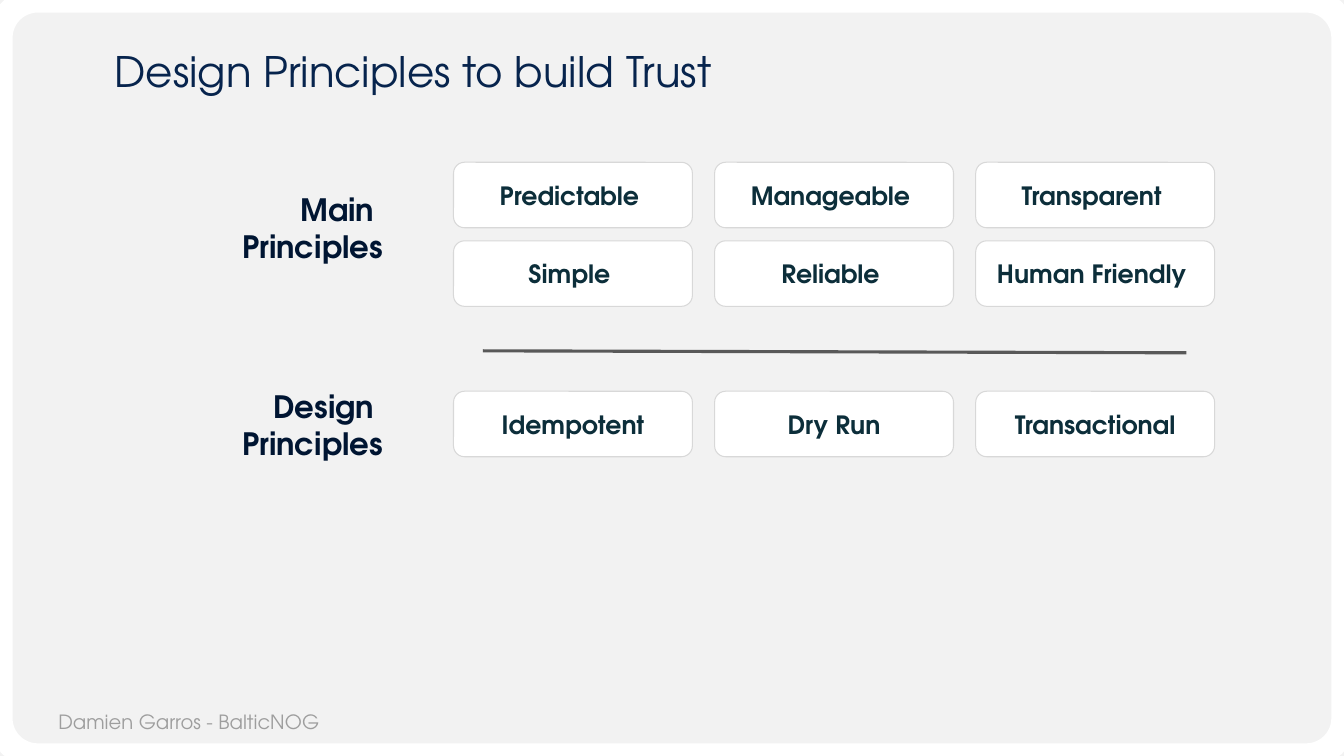
"""Build the slide on design principles that build trust."""
import pptx
import pptx.dml.color
import pptx.enum.shapes
import pptx.enum.text
import pptx.oxml
import pptx.oxml.ns
import pptx.util

Cm = pptx.util.Cm
Pt = pptx.util.Pt
Align = pptx.enum.text.PP_ALIGN
Anchor = pptx.enum.text.MSO_ANCHOR


def color(value):
    return pptx.dml.color.RGBColor.from_string(value)


def write(shape, text, size, ink, bold=False, align=Align.LEFT,
          anchor=Anchor.TOP, spacing=None, font="TeX Gyre Adventor"):
    frame = shape.text_frame
    frame.word_wrap = True
    frame.auto_size = pptx.enum.text.MSO_AUTO_SIZE.NONE
    frame.vertical_anchor = anchor
    frame.margin_left = frame.margin_right = Cm(0.25)
    frame.margin_top = frame.margin_bottom = Cm(0.25)
    paragraph = frame.paragraphs[0]
    paragraph.text = text
    paragraph.alignment = align
    paragraph.line_spacing = spacing
    for run in paragraph.runs:
        run.font.name = font
        run.font.size = Pt(size)
        run.font.bold = bold
        run.font.color.rgb = color(ink)


class PrinciplesSlide:
    background = "F2F2F2"
    white = "FFFFFF"
    title_ink = "07244D"
    label_ink = "001532"
    card_ink = "0C2E3A"
    card_edge = "D8D8D8"
    divider_ink = "595959"
    footer_ink = "9E9E9E"

    def __init__(self, presentation):
        self.slide = presentation.slides.add_slide(presentation.slide_layouts[5])
        fill = self.slide.background.fill
        fill.solid()
        fill.fore_color.rgb = color(self.background)

    def rounded(self, left, top, width, height, radius, edge, weight):
        shape = self.slide.shapes.add_shape(
            pptx.enum.shapes.MSO_SHAPE.ROUNDED_RECTANGLE,
            Cm(left), Cm(top), Cm(width), Cm(height))
        shape.shadow.inherit = False
        shape.adjustments[0] = radius
        shape.line.color.rgb = color(edge)
        shape.line.width = Pt(weight)
        return shape

    def frame(self, width, height):
        shape = self.rounded(0, 0, width, height, 0.05, self.white, 18)
        shape.fill.background()

    def title(self, text):
        title = self.slide.shapes.title
        title.left, title.top = Cm(2.64), Cm(1.14)
        title.width, title.height = Cm(29.9), Cm(1.65)
        write(title, text, 30, self.title_ink, spacing=0.8)

    def text(self, text, left, top, width, height, **style):
        box = self.slide.shapes.add_textbox(
            Cm(left), Cm(top), Cm(width), Cm(height))
        write(box, text, **style)

    def label(self, text, top):
        self.text(text, 1.57, top, 8.33, 2.39, size=22, ink=self.label_ink,
                  bold=True, align=Align.RIGHT)

    def card_row(self, names, top):
        for column, name in enumerate(names):
            card = self.rounded(11.43 + 6.58 * column, top, 6.02, 1.65,
                                0.167, self.card_edge, 0.75)
            card.fill.solid()
            card.fill.fore_color.rgb = color(self.white)
            write(card, name, 18, self.card_ink, bold=True,
                  align=Align.CENTER, anchor=Anchor.MIDDLE)

    def divider(self, left, top, right, bottom):
        line = self.slide.shapes.add_connector(
            pptx.enum.shapes.MSO_CONNECTOR.STRAIGHT,
            Cm(left), Cm(top), Cm(right), Cm(bottom))
        line.line.color.rgb = color(self.divider_ink)
        line.line.width = Pt(2.25)
        properties = line._element.spPr
        properties.append(pptx.oxml.parse_xml(
            f"<a:effectLst {pptx.oxml.ns.nsdecls('a')}/>"))


def main():
    width, height = 33.87, 19.05
    presentation = pptx.Presentation()
    presentation.slide_width = Cm(width)
    presentation.slide_height = Cm(height)

    page = PrinciplesSlide(presentation)
    page.frame(width, height)
    page.text("Damien Garros - BalticNOG", 1.22, 17.63, 16.43, 1.12,
              size=14, ink=page.footer_ink)
    page.title("Design Principles to build Trust")
    page.label("Main \vPrinciples", 4.55)
    page.card_row(["Predictable ", "Manageable ", "Transparent "], 4.09)
    page.card_row(["Simple ", "Reliable ", "Human Friendly "], 6.07)
    page.divider(12.17, 8.84, 29.9, 8.89)
    page.label("Design \vPrinciples", 9.53)
    page.card_row(["Idempotent", "Dry Run", "Transactional"], 9.86)
    presentation.save("out.pptx")


if __name__ == "__main__":
    main()
